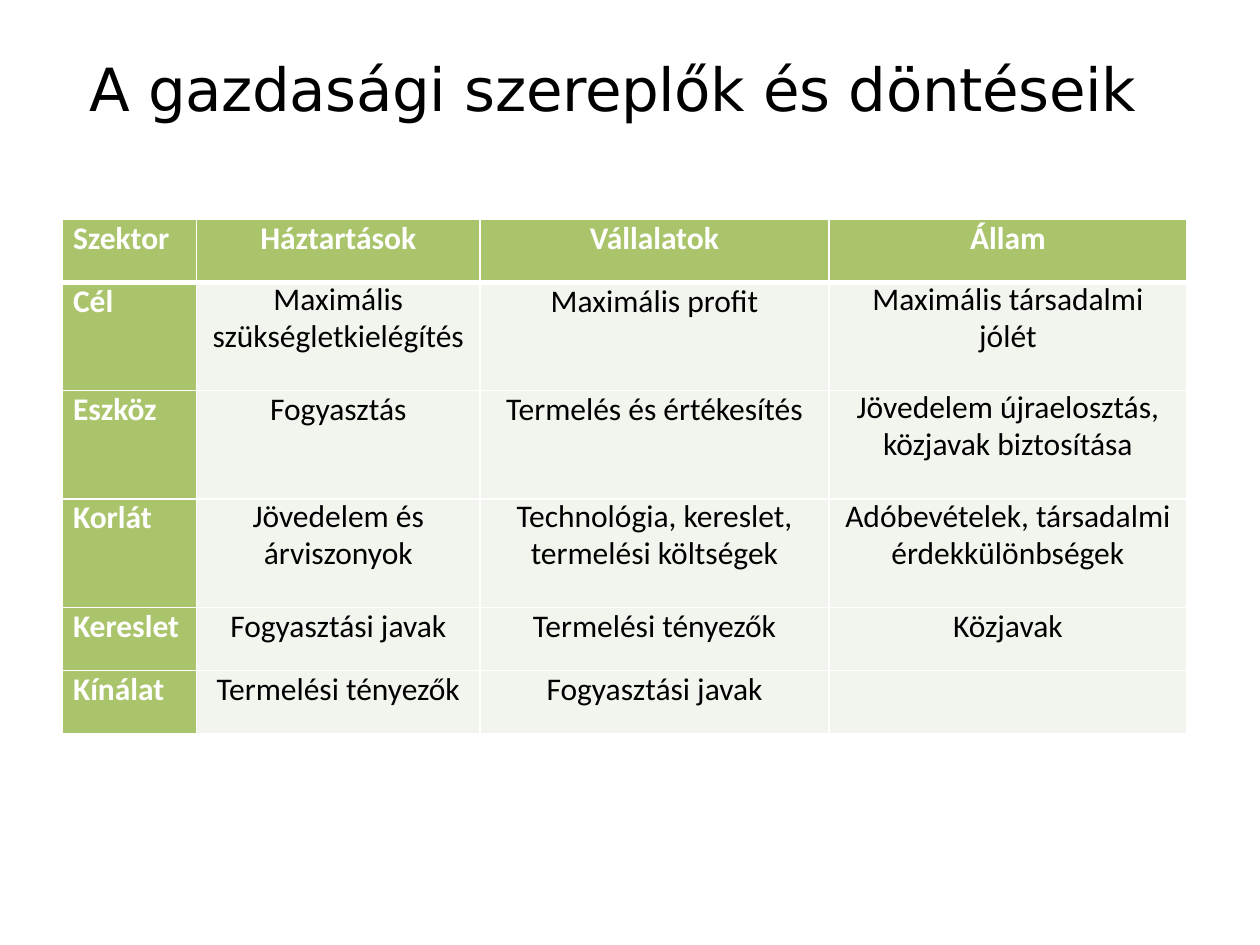
from typing import NamedTuple

from lxml import etree
from pptx import Presentation
from pptx import util as u
from pptx.dml.color import RGBColor
from pptx.enum import text
from pptx.oxml import ns

COLORS = {"ink": "000000", "white": "FFFFFF", "green": "AAC46C", "pale": "F2F5EE"}
COLUMN_WIDTHS = [1.07, 2.25, 2.77, 2.84]
ROW_HEIGHTS = [0.5, 0.86, 0.86, 0.86, 0.5, 0.5]


class Entry(NamedTuple):
    wording: str
    two_lines: bool = False


class CellStyle(NamedTuple):
    fill: str
    color: str
    bold: bool
    align: text.PP_ALIGN
    margin: float


HEADING = CellStyle("green", "white", True, text.PP_ALIGN.CENTER, 0.11)
SECTOR = CellStyle("green", "white", True, text.PP_ALIGN.LEFT, 0.09)
DECISION = CellStyle("pale", "ink", False, text.PP_ALIGN.CENTER, 0.11)

SECTORS = [
    [Entry("Szektor"), Entry("Háztartások"), Entry("Vállalatok"), Entry("Állam")],
    [Entry("Cél"), Entry("Maximális szükségletkielégítés", True),
     Entry("Maximális proﬁt"), Entry("Maximális társadalmi jólét", True)],
    [Entry("Eszköz"), Entry("Fogyasztás"), Entry("Termelés és értékesítés"),
     Entry("Jövedelem újraelosztás, közjavak biztosítása", True)],
    [Entry("Korlát"), Entry("Jövedelem és árviszonyok", True),
     Entry("Technológia, kereslet, termelési költségek", True),
     Entry("Adóbevételek, társadalmi érdekkülönbségek", True)],
    [Entry("Kereslet"), Entry("Fogyasztási javak"), Entry("Termelési tényezők"),
     Entry("Közjavak")],
    [Entry("Kínálat"), Entry("Termelési tényezők"), Entry("Fogyasztási javak"),
     Entry("")],
]


def apply(target, values: dict) -> None:
    for name, value in values.items():
        setattr(target, name, value)


def write(paragraph, wording: str, color: str, font: dict):
    run = paragraph.add_run()
    run.text = wording
    apply(run.font, font)
    run.font.color.rgb = RGBColor.from_string(COLORS[color])
    return run


def add_border(cell, side: str, points: float) -> None:
    properties = cell._tc.get_or_add_tcPr()
    line = etree.SubElement(properties, ns.qn(f"a:ln{side}"), w=str(u.Pt(points)))
    fill = etree.SubElement(line, ns.qn("a:solidFill"))
    etree.SubElement(fill, ns.qn("a:srgbClr"), val=COLORS["white"])


def fill_cell(cell, entry: Entry, style: CellStyle, borders: dict) -> None:
    apply(cell, {
        "margin_left": u.Inches(style.margin),
        "margin_right": u.Inches(0 if style is SECTOR else style.margin),
        "margin_top": 0,
        "margin_bottom": 0,
        "vertical_anchor": text.MSO_ANCHOR.TOP,
    })
    for side, points in borders.items():
        add_border(cell, side, points)
    cell.fill.solid()
    cell.fill.fore_color.rgb = RGBColor.from_string(COLORS[style.fill])
    paragraph = cell.text_frame.paragraphs[0]
    paragraph.alignment = style.align
    if entry.two_lines:
        paragraph.line_spacing = u.Pt(21)
    if entry.wording:
        write(paragraph, entry.wording, style.color,
              {"name": "Calibri", "size": u.Pt(18), "bold": style.bold})


def add_title(slide) -> None:
    frame = slide.shapes.add_textbox(
        u.Inches(0.71), u.Inches(0.41), u.Inches(8.57), u.Inches(0.57)).text_frame
    apply(frame, {"margin_left": 0, "margin_right": 0, "margin_top": 0,
                  "margin_bottom": 0, "word_wrap": True,
                  "auto_size": text.MSO_AUTO_SIZE.SHAPE_TO_FIT_TEXT})
    heading = write(frame.paragraphs[0], "A gazdasági szereplők és döntéseik", "ink",
                    {"name": "DejaVu Sans", "size": u.Pt(34)})
    heading.font._element.set("spc", "-20")


def add_sector_table(slide) -> None:
    table = slide.shapes.add_table(
        len(ROW_HEIGHTS), len(COLUMN_WIDTHS), u.Inches(0.49), u.Inches(1.74),
        u.Inches(sum(COLUMN_WIDTHS)), u.Inches(sum(ROW_HEIGHTS))).table
    table.horz_banding = False
    for column, width in zip(table.columns, COLUMN_WIDTHS):
        column.width = u.Inches(width)
    for row, height in zip(table.rows, ROW_HEIGHTS):
        row.height = u.Inches(height)
    for r, entries in enumerate(SECTORS):
        borders = {"L": 1, "R": 1, "T": 3 if r == 1 else 1, "B": 3 if r == 0 else 1}
        for c, entry in enumerate(entries):
            style = SECTOR if c == 0 else HEADING if r == 0 else DECISION
            fill_cell(table.cell(r, c), entry, style, borders)


def main() -> None:
    presentation = Presentation()
    apply(presentation, {"slide_width": u.Inches(10), "slide_height": u.Inches(7.5)})
    slide = presentation.slides.add_slide(presentation.slide_layouts[6])
    add_title(slide)
    add_sector_table(slide)
    presentation.save("out.pptx")


if __name__ == "__main__":
    main()
